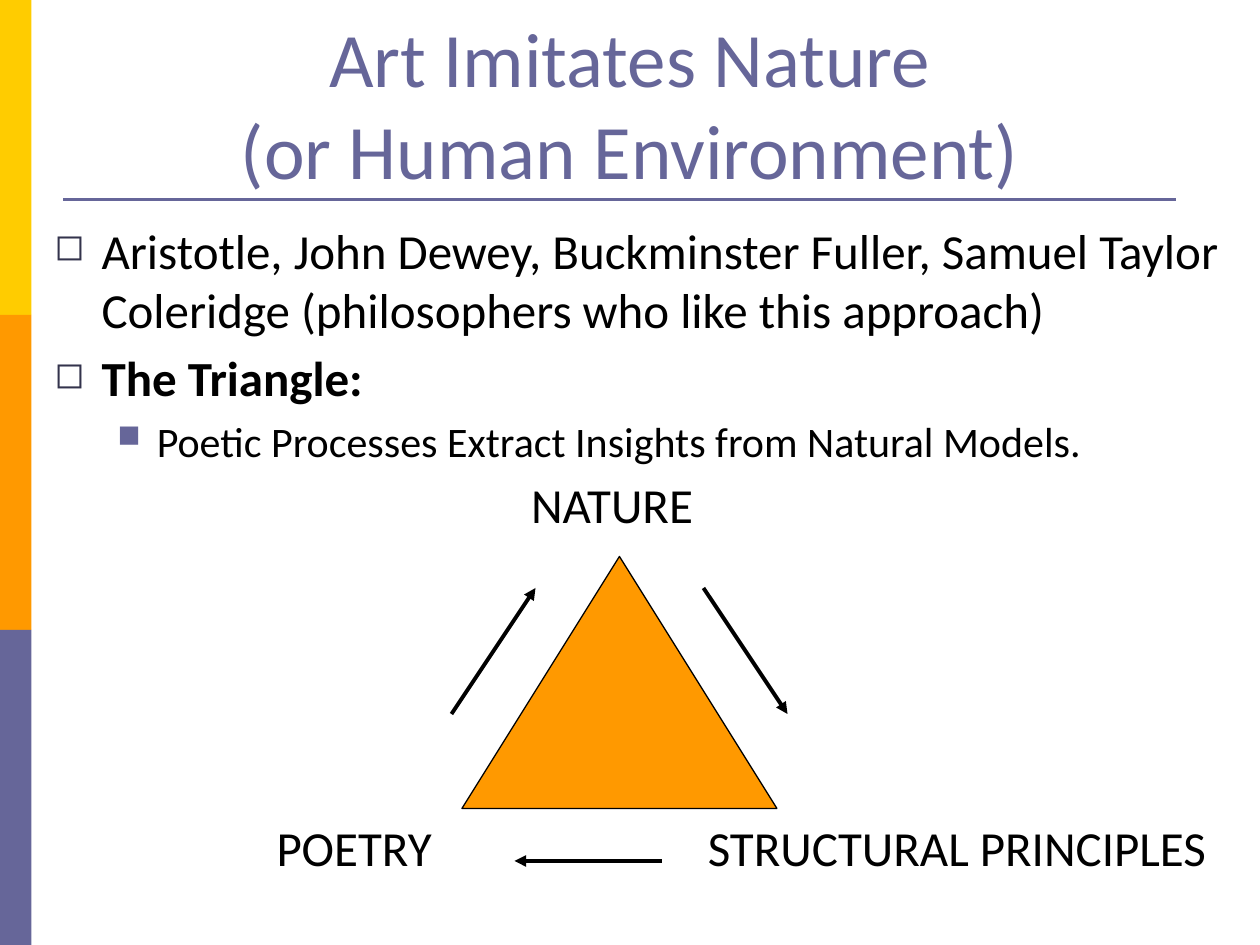
from lxml import etree
from pptx import Presentation
from pptx.dml.color import RGBColor
from pptx.enum.shapes import MSO_CONNECTOR, MSO_SHAPE
from pptx.enum.text import MSO_ANCHOR, PP_ALIGN
from pptx.oxml.ns import qn
from pptx.util import Pt

RECT = MSO_SHAPE.RECTANGLE
PEAK = MSO_SHAPE.ISOSCELES_TRIANGLE
LINE = MSO_CONNECTOR.STRAIGHT
TOP, BOTTOM = MSO_ANCHOR.TOP, MSO_ANCHOR.BOTTOM
LEFT, CENTER = PP_ALIGN.LEFT, PP_ALIGN.CENTER
GOLD, ORANGE, VIOLET = "FFCC00", "FF9900", "666699"
DARK, BLACK = "33334C", "000000"


def paint(color, value):
    color.rgb = RGBColor.from_string(value)


def add(parent, tag, **attrs):
    return etree.SubElement(parent, qn(tag), attrs)


class Board:
    font = "Calibri"

    def __init__(self, slide):
        self.slide = slide
        self.shapes = slide.shapes

    def shape(self, kind, box, fill, line=None):
        item = self.shapes.add_shape(kind, *map(Pt, box))
        item.shadow.inherit = False
        item.fill.solid()
        paint(item.fill.fore_color, fill)
        if line:
            paint(item.line.color, line)
            item.line.width = Pt(0.75)
        else:
            item.line.fill.background()

    def line(self, start, end, color, width, arrow=False):
        item = self.shapes.add_connector(LINE, *map(Pt, start + end))
        paint(item.line.color, color)
        item.line.width = Pt(width)
        if arrow:
            add(item.line._get_or_add_ln(), "a:tailEnd", type="triangle")
        add(item._element.spPr, "a:effectLst")

    def frame(self, box, anchor=TOP, inset=0):
        frame = self.shapes.add_textbox(*map(Pt, box)).text_frame
        frame.word_wrap = True
        frame.vertical_anchor = anchor
        frame.margin_left = frame.margin_right = Pt(inset)
        frame.margin_top = frame.margin_bottom = 0
        return frame

    def style(self, para, size, color=BLACK, bold=False):
        para.font.name = self.font
        para.font.size = Pt(size)
        para.font.bold = bold
        paint(para.font.color, color)

    def text(self, box, words, size, color=BLACK, align=LEFT, anchor=TOP):
        para = self.frame(box, anchor).paragraphs[0]
        para.text = words
        para.alignment = align
        self.style(para, size, color)

    def bullets(self, box, rows):
        frame = self.frame(box, inset=7.2)
        for num, (words, size, bold, level, left, hang, mark, color) in enumerate(rows):
            para = frame.add_paragraph() if num else frame.paragraphs[0]
            para.text = words
            para.level = level
            para.space_before = Pt(size * 0.2)
            props = para._p.get_or_add_pPr()
            props.set("marL", str(Pt(left)))
            props.set("indent", str(-Pt(hang)))
            add(add(props, "a:buClr"), "a:srgbClr", val=color)
            add(props, "a:buSzPct", val="75000")
            add(props, "a:buChar", char=mark)
            self.style(para, size, bold=bold)


def main():
    deck = Presentation()
    deck.slide_width, deck.slide_height = Pt(720), Pt(540)
    board = Board(deck.slides.add_slide(deck.slide_layouts[6]))

    for num, color in enumerate((GOLD, ORANGE, VIOLET)):
        board.shape(RECT, (0, num * 180, 18, 180), color)
    board.line((36, 114), (672, 114), VIOLET, 1.5)
    board.text((36, 21.6, 648, 90), "Art Imitates Nature\v(or Human Environment)",
               44, VIOLET, CENTER, BOTTOM)

    first = (0, 27, 27, "◻", DARK)
    board.bullets((24, 126, 684, 140), (
        ("Aristotle, John Dewey, Buckminster Fuller, Samuel Taylor Coleridge "
         "(philosophers who like this approach)", 28, False, *first),
        ("The Triangle:", 28, True, *first),
        ("Poetic Processes Extract Insights from Natural Models.",
         24, False, 1, 58.5, 22.5, "■", VIOLET),
    ))

    for left, top, width, words in (
        (303.5, 271, 120, "NATURE"),
        (158, 467, 120, "POETRY"),
        (404.5, 467, 310, "STRUCTURAL PRINCIPLES"),
    ):
        board.text((left, top, width, 34), words, 28)

    board.shape(PEAK, (264, 318, 180, 144), ORANGE, BLACK)
    for start, end in (
        ((402, 336), (450, 408)),
        ((378, 492), (294, 492)),
        ((258, 408), (306, 336)),
    ):
        board.line(start, end, BLACK, 2.25, True)

    deck.save("out.pptx")


if __name__ == "__main__":
    main()
